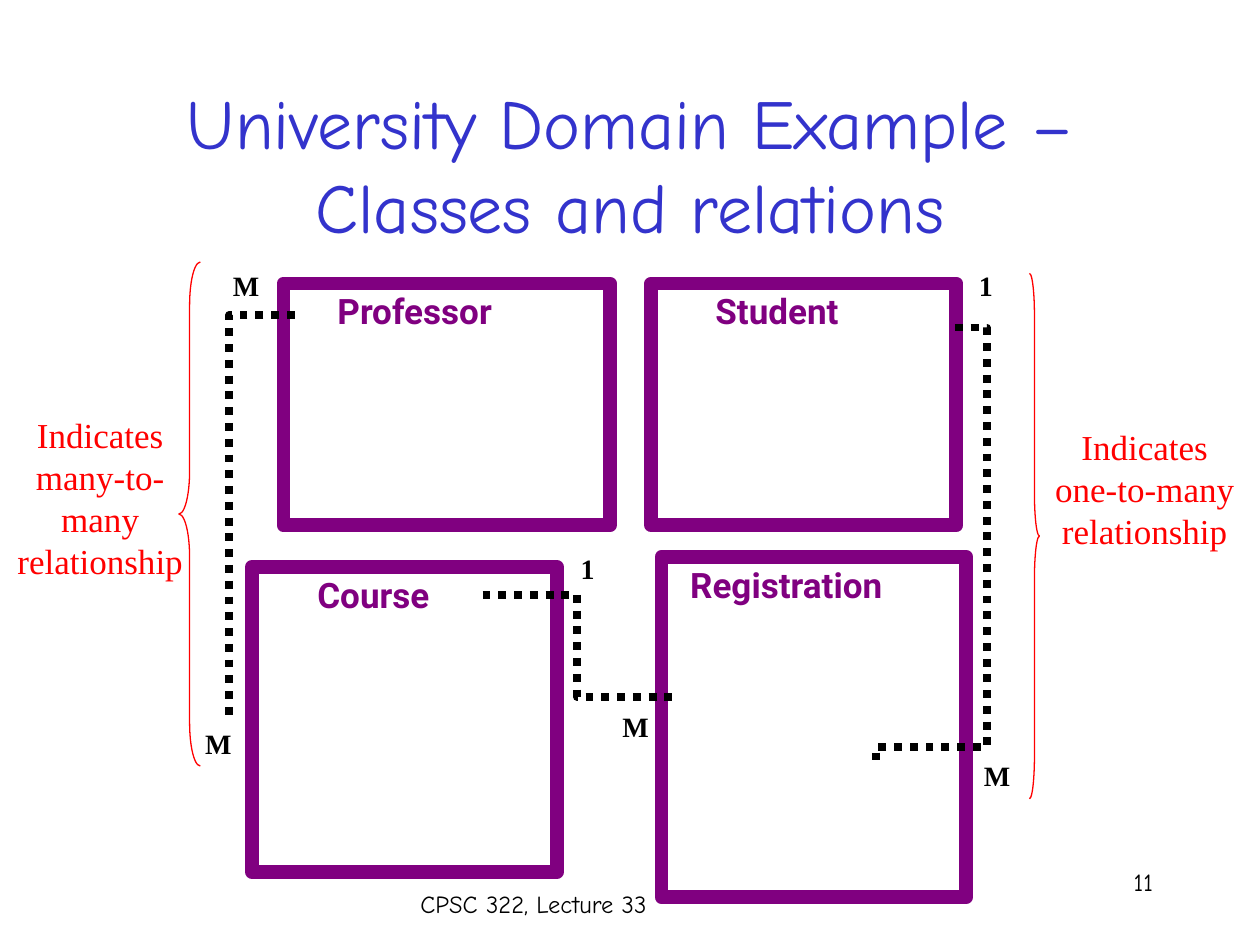
from lxml import etree
from pptx import Presentation
from pptx import util as u
from pptx.dml.color import RGBColor
from pptx.enum import dml, shapes, text
from pptx.oxml.ns import qn

PX = 9144  # 100 px to the inch
COLOURS = {"title": "3333CC", "class": "800080", "note": "FF0000",
           "ink": "000000", "paper": "FFFFFF"}
FONTS = {"main": "Comic Neue", "class": "Roboto", "label": "Times New Roman"}
LEFT, CENTER, RIGHT = (text.PP_ALIGN.LEFT, text.PP_ALIGN.CENTER,
                       text.PP_ALIGN.RIGHT)


def colour(name):
    return RGBColor.from_string(COLOURS[name])


class Diagram:
    """Holds the style and the current slide; places are in px."""

    def __init__(self, slide):
        self.slide = slide

    def format_text(self, box, words, font, size, ink, align=LEFT, bold=False):
        frame = box.text_frame
        frame.text = words
        for para in frame.paragraphs:
            para.alignment = align
            for span in para.runs:
                span.font.name = FONTS[font]
                span.font.size = u.Pt(size)
                span.font.bold = bold
                span.font.color.rgb = colour(ink)

    def title(self, words, *place):
        box = self.slide.shapes.title
        box.left, box.top, box.width, box.height = (n * PX for n in place)
        box.text_frame.auto_size = text.MSO_AUTO_SIZE.NONE
        box.text_frame.vertical_anchor = text.MSO_ANCHOR.MIDDLE
        self.format_text(box, words, "main", 40, "title", CENTER)

    def text_box(self, words, place, font, size, ink, align=LEFT, bold=False,
                 wrap=True):
        box = self.slide.shapes.add_textbox(*(n * PX for n in place))
        box.text_frame.word_wrap = wrap
        self.format_text(box, words, font, size, ink, align, bold)

    def outline(self, kind, place, ink, weight):
        shape = self.slide.shapes.add_shape(kind, *(n * PX for n in place))
        shape.shadow.inherit = False
        shape.line.color.rgb = colour(ink)
        shape.line.width = u.Pt(weight)
        return shape

    def class_box(self, place):
        box = self.outline(shapes.MSO_SHAPE.RECTANGLE, place, "class", 8)
        box.fill.solid()
        box.fill.fore_color.rgb = colour("paper")

    def brace(self, kind, place, curl):
        brace = self.outline(kind, place, "note", 0.75)
        brace.fill.background()
        brace.adjustments[0] = curl

    def relation(self, start, end, preset, *bends):
        """Dotted elbow line; bends are shares of its width and height."""
        line = self.slide.shapes.add_connector(
            shapes.MSO_CONNECTOR.ELBOW, *(n * PX for n in start + end))
        line.line.color.rgb = colour("ink")
        line.line.width = u.Pt(4.5)
        line.line.dash_style = dml.MSO_LINE.ROUND_DOT
        properties = line._element.spPr
        etree.SubElement(properties, qn("a:effectLst"))
        geometry = properties.find(qn("a:prstGeom"))
        geometry.set("prst", preset)
        guides = geometry.find(qn("a:avLst"))
        for number, bend in enumerate(bends, 1):
            etree.SubElement(guides, qn("a:gd"), name=f"adj{number}",
                             fmla=f"val {round(bend * 100000)}")


def main():
    deck = Presentation()
    deck.slide_width, deck.slide_height = 1000 * PX, 750 * PX
    diagram = Diagram(deck.slides.add_slide(deck.slide_layouts[5]))
    diagram.title("University Domain Example – Classes and relations",
                  75, 67, 850, 125)

    classes = [("Course", (200, 450, 242, 242), 242, 142),
               ("Registration", (525, 442, 242, 270), 538, 217),
               ("Student", (517, 225, 242, 192), 558, 156),
               ("Professor", (225, 225, 259, 192), 258, 183)]
    for name, place, left, width in classes:
        diagram.class_box(place)
        diagram.text_box(name, (left, place[1], width, 44), "class", 20,
                         "class", bold=True)

    diagram.relation((383, 472), (533, 553), "bentConnector3", 0.5)
    diagram.relation((758, 260), (695, 607), "bentConnector4", -0.4, 0.96)
    diagram.relation((234, 250), (182, 572), "bentConnector2")

    for mark, left, top in [("M", 175, 208), ("M", 153, 572), ("M", 484, 558),
                            ("1", 451, 433), ("M", 771, 597), ("1", 767, 208)]:
        width = 41 if mark == "M" else 31
        diagram.text_box(mark, (left, top, width, 37), "label", 16, "ink",
                         bold=True, wrap=False)

    notes = [("many-to-many", (0, 323, 159, 143),
              shapes.MSO_SHAPE.LEFT_BRACE, (142, 208, 17, 400), 2),
             ("one-to-many", (817, 333, 183, 111),
              shapes.MSO_SHAPE.RIGHT_BRACE, (817, 217, 8, 417), 4.17)]
    for relation, place, kind, brace_place, curl in notes:
        diagram.text_box(f"Indicates\n{relation}\nrelationship", place,
                         "label", 20, "note", CENTER)
        diagram.brace(kind, brace_place, curl)

    diagram.text_box("CPSC 322, Lecture 33", (265, 701, 317, 50), "main", 14,
                     "ink", CENTER)
    diagram.text_box("11", (717, 683, 208, 50), "main", 14, "ink", RIGHT)
    deck.save("out.pptx")


if __name__ == "__main__":
    main()
